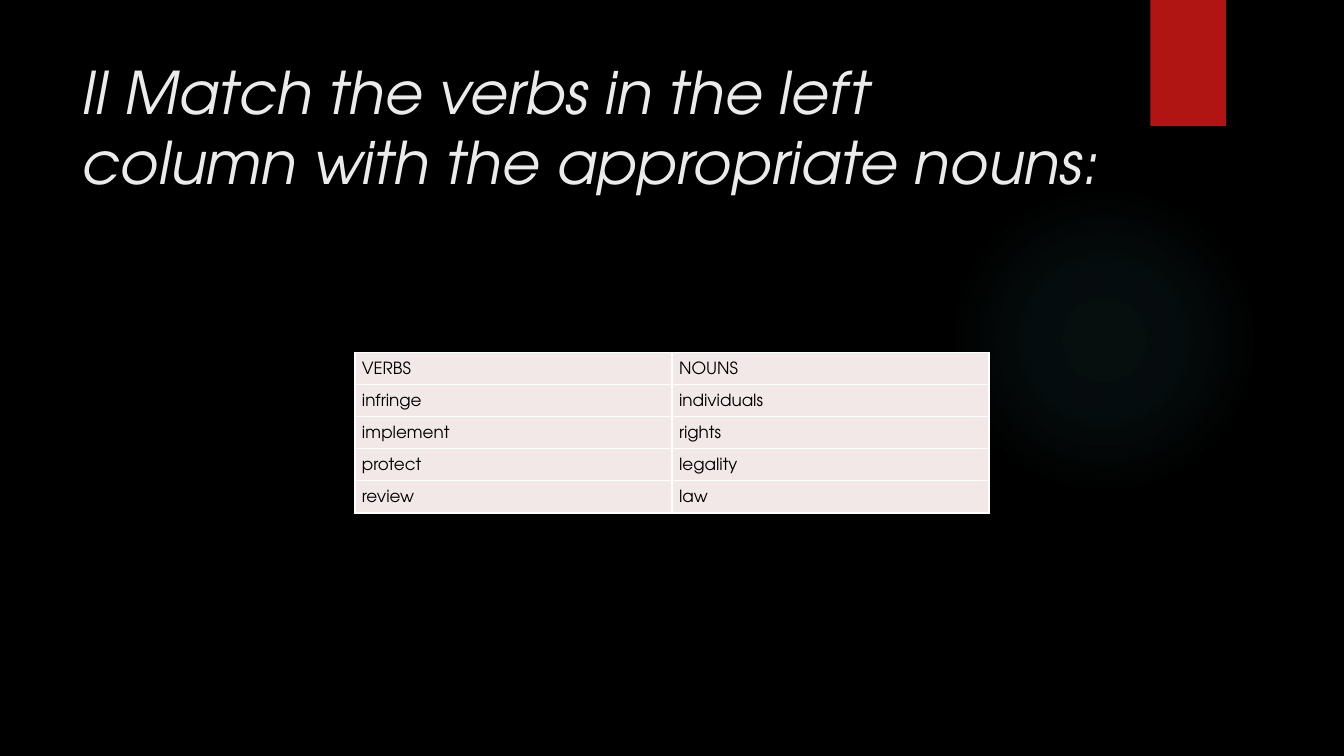
from lxml.etree import SubElement
from pptx import Presentation
from pptx.dml.color import RGBColor
from pptx.enum.shapes import MSO_SHAPE
from pptx.enum.text import MSO_ANCHOR, MSO_AUTO_SIZE, PP_ALIGN
from pptx.oxml import parse_xml
from pptx.oxml.ns import nsdecls, qn
from pptx.util import Inches, Pt

FONT = "TeX Gyre Adventor"
PAIRS = [("VERBS", "NOUNS"), ("infringe", "individuals"), ("implement", "rights"),
         ("protect", "legality"), ("review", "law")]


def color(value):
    return RGBColor.from_string(value)


def write(tf, text, size, fill, italic=False, spacing=None):
    p = tf.paragraphs[0]
    p.alignment = PP_ALIGN.LEFT
    p.line_spacing = spacing
    r = p.add_run()
    r.text = text
    r.font.name, r.font.size, r.font.italic = FONT, Pt(size), italic
    r.font.color.rgb = color(fill)


def add_plain_shape(s, kind, box, fill):
    sp = s.shapes.add_shape(kind, *map(Inches, box))
    sp.shadow.inherit = False
    sp.line.fill.background()
    sp.fill.solid()
    sp.fill.fore_color.rgb = color(fill)
    return sp


def add_glow(s, box, fill, stops):
    """Circle that fades from its centre; stops are (position %, opacity %)."""
    sp = add_plain_shape(s, MSO_SHAPE.OVAL, box, fill)
    grad = parse_xml(f'<a:gradFill {nsdecls("a")} rotWithShape="1"><a:gsLst/>'
                     '<a:path path="circle"><a:fillToRect l="50000" t="50000" '
                     'r="50000" b="50000"/></a:path></a:gradFill>')
    for position, opacity in stops:
        gs = SubElement(grad[0], qn("a:gs"), pos=str(position * 1000))
        clr = SubElement(gs, qn("a:srgbClr"), val=fill)
        SubElement(clr, qn("a:alpha"), val=str(opacity * 1000))
    sp_pr = sp.element.spPr
    sp_pr.replace(sp_pr.find(qn("a:solidFill")), grad)


def set_title(s, box, text):
    sp = s.shapes.title
    sp.left, sp.top, sp.width, sp.height = map(Inches, box)
    tf = sp.text_frame
    tf.word_wrap = True
    tf.auto_size = MSO_AUTO_SIZE.NONE
    tf.vertical_anchor = MSO_ANCHOR.TOP
    write(tf, text, 42, "EBEBEB", italic=True)


def add_borders(cell, line_color, width):
    tc_pr = cell._tc.get_or_add_tcPr()
    for i, side in enumerate(("lnL", "lnR", "lnT", "lnB")):
        tc_pr.insert(i, parse_xml(
            f'<a:{side} {nsdecls("a")} w="{Pt(width)}"><a:solidFill>'
            f'<a:srgbClr val="{line_color}"/></a:solidFill></a:{side}>'))


def add_word_table(s, box, rows):
    table = s.shapes.add_table(len(rows), len(rows[0]), *map(Inches, box)).table
    for row, words in zip(table.rows, rows):
        for cell, word in zip(row.cells, words):
            cell.margin_left = cell.margin_right = Inches(0.07)
            cell.margin_top = cell.margin_bottom = 0
            cell.vertical_anchor = MSO_ANCHOR.MIDDLE
            cell.fill.solid()
            cell.fill.fore_color.rgb = color("F2E8E7")
            add_borders(cell, "FFFFFF", 1)
            write(cell.text_frame, word, 12, "000000", spacing=1.15)


def build_slide(prs):
    s = prs.slides.add_slide(prs.slide_layouts[5])
    s.background.fill.solid()
    s.background.fill.fore_color.rgb = color("000000")

    # Backdrop
    add_glow(s, (9.41, 1.83, 3.08, 3.08), "50B9C1", [(0, 7), (36, 6), (69, 0)])
    add_plain_shape(s, MSO_SHAPE.RECTANGLE, (11.41, 0, 0.75, 1.25), "B01513")

    # Exercise
    set_title(s, (0.71, 0.5, 10.29, 1.53),
              "II Match the verbs in the left column with the appropriate nouns:")
    add_word_table(s, (3.52, 3.5, 6.29, 1.59), PAIRS)


def main():
    prs = Presentation()
    prs.slide_width, prs.slide_height = Inches(13.33), Inches(7.5)
    build_slide(prs)
    prs.save("out.pptx")


if __name__ == "__main__":
    main()
